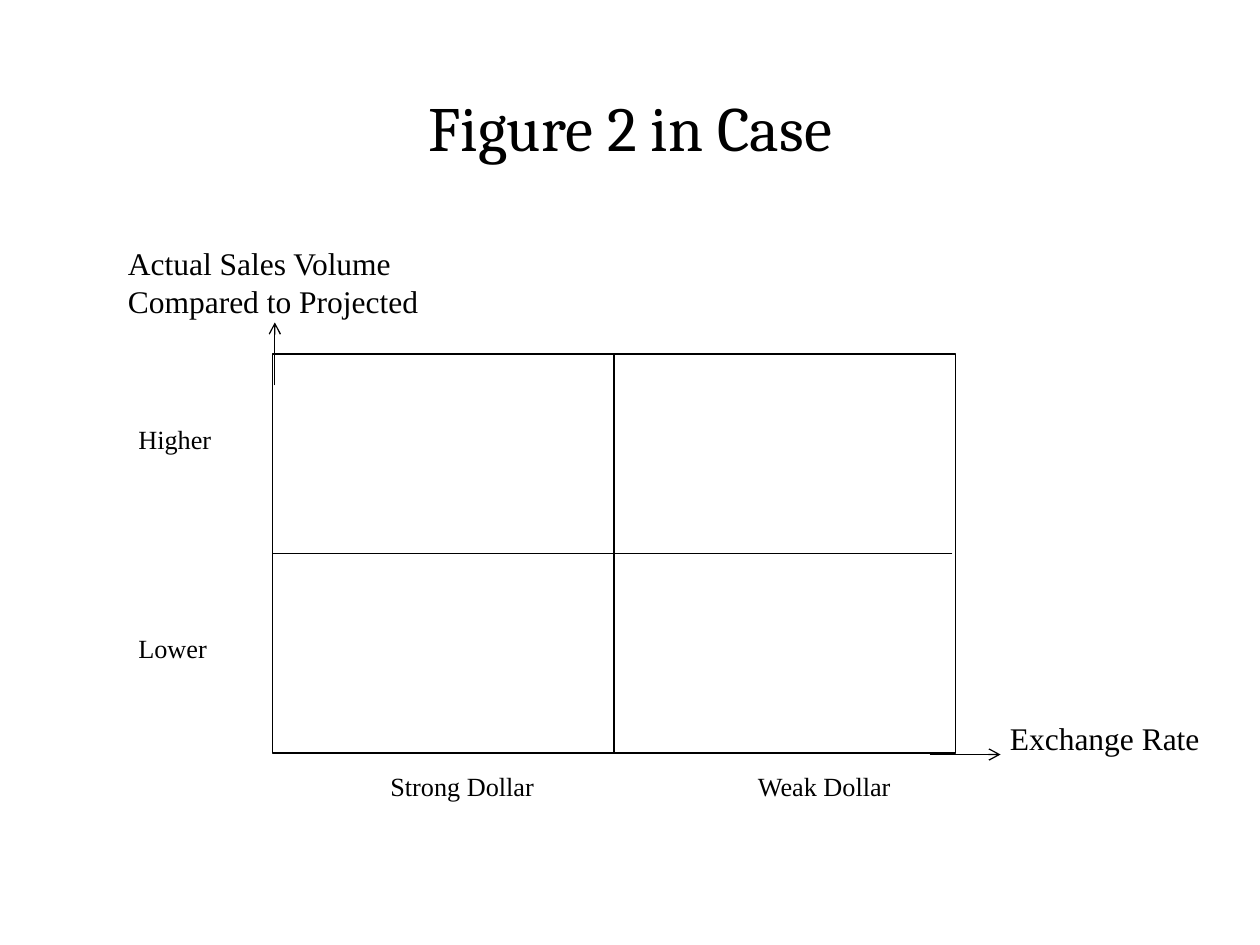
from lxml.etree import SubElement
from pptx import Presentation
from pptx.dml.color import RGBColor
from pptx.enum.shapes import MSO_CONNECTOR, MSO_SHAPE
from pptx.enum.text import MSO_ANCHOR, PP_ALIGN
from pptx.oxml.ns import qn
from pptx.util import Cm, Pt


def color(value):
    return RGBColor.from_string(value)


def write(tf, text, font="Times New Roman", size=15, ink="000000",
          align=PP_ALIGN.LEFT, anchor=MSO_ANCHOR.TOP):
    tf.word_wrap = True
    tf.vertical_anchor = anchor
    p = tf.paragraphs[0]
    p.alignment = align
    r = p.add_run()
    r.text = text
    r.font.name, r.font.size = font, Pt(size)
    r.font.color.rgb = color(ink)


class Matrix:
    ink = "000000"
    weight = Pt(0.75)

    def __init__(self, slide):
        self.s = slide

    def text(self, text, x, y, w, h, **fmt):
        sp = self.s.shapes.add_textbox(Cm(x), Cm(y), Cm(w), Cm(h))
        write(sp.text_frame, text, ink=self.ink, **fmt)

    def frame(self, x, y, w, h):
        sp = self.s.shapes.add_shape(MSO_SHAPE.RECTANGLE, Cm(x), Cm(y), Cm(w), Cm(h))
        sp.shadow.inherit = False
        sp.fill.background()
        sp.line.color.rgb = color(self.ink)
        sp.line.width = self.weight

    def line(self, x1, y1, x2, y2, arrow=False):
        cn = self.s.shapes.add_connector(
            MSO_CONNECTOR.STRAIGHT, Cm(x1), Cm(y1), Cm(x2), Cm(y2))
        cn.line.color.rgb = color(self.ink)
        cn.line.width = self.weight
        props = cn._element.spPr
        if arrow:
            SubElement(props.find(qn("a:ln")), qn("a:tailEnd"), type="arrow")
        SubElement(props, qn("a:effectLst"))


def main():
    prs = Presentation()
    prs.slide_width, prs.slide_height = Cm(25.4), Cm(19.05)
    m = Matrix(prs.slides.add_slide(prs.slide_layouts[6]))

    # Title
    m.text("Figure 2 in Case", 1.91, 1.27, 21.59, 2.54, font="Cambria", size=36,
           align=PP_ALIGN.CENTER, anchor=MSO_ANCHOR.MIDDLE)

    # Two-by-two grid
    x, y, w, h = 5.5, 7.14, 13.76, 8.04
    m.frame(x, y, w, h)
    m.line(x + w / 2, y, x + w / 2, y + h)
    m.line(x + w - 0.06, y + h / 2, x, y + h / 2)

    # Axes
    m.text("Actual Sales Volume Compared to Projected", 2.33, 4.8, 6.56, 1.8, size=18)
    m.text("Exchange Rate", 20.11, 14.37, 4.87, 1.02, size=18)
    m.line(5.54, 7.77, 5.54, 6.5, arrow=True)
    m.line(18.74, 15.21, 20.17, 15.21, arrow=True)

    # Row and column labels
    for label, top in (("Higher", 8.41), ("Lower", 12.63)):
        m.text(label, 2.54, top, 2.33, 0.9)
    for label, left in (("Strong Dollar", 7.62), ("Weak Dollar", 15.03)):
        m.text(label, left, 15.4, 3.6, 0.9)

    prs.save("out.pptx")


if __name__ == "__main__":
    main()
